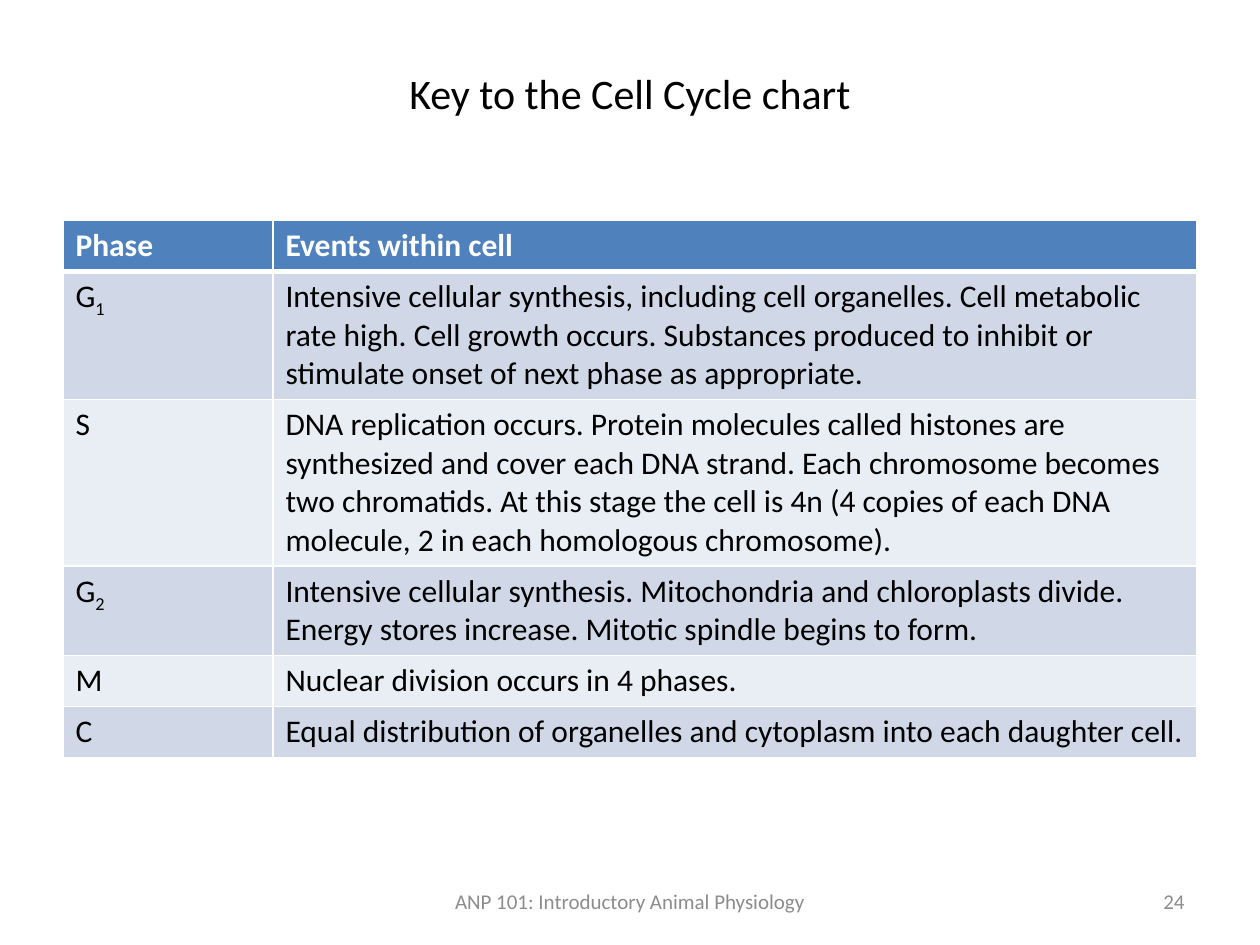
"""Build the slide with the key to the cell cycle chart."""
from lxml import etree
from pptx import Presentation
from pptx.dml.color import RGBColor
from pptx.enum.text import MSO_ANCHOR, PP_ALIGN
from pptx.oxml.ns import qn
from pptx.util import Pt

MIDDLE = MSO_ANCHOR.MIDDLE
CENTER, RIGHT = PP_ALIGN.CENTER, PP_ALIGN.RIGHT

ROWS = [
    (("Phase",), "Events within cell"),
    (("G", "1"), "Intensive cellular synthesis, including cell organelles. Cell metabolic rate high. "
                 "Cell growth occurs. Substances produced to inhibit or stimulate onset of next phase "
                 "as appropriate."),
    (("S",), "DNA replication occurs. Protein molecules called histones are synthesized and cover each "
             "DNA strand. Each chromosome becomes two chromatids. At this stage the cell is 4n (4 copies "
             "of each DNA molecule, 2 in each homologous chromosome)."),
    (("G", "2"), "Intensive cellular synthesis. Mitochondria and chloroplasts divide. Energy stores "
                 "increase. Mitotic spindle begins to form."),
    (("M",), "Nuclear division occurs in 4 phases."),
    (("C",), "Equal distribution of organelles and cytoplasm into each daughter cell."),
]

THEME = {
    "font": "Calibri",
    "title": {"size": 24, "color": "000000"},
    "head": {"size": 18, "color": "FFFFFF", "bold": True},
    "body": {"size": 18, "color": "000000", "bold": False},
    "foot": {"size": 12, "color": "8C8C8C"},
    "fills": {"head": "4F81BD", "bands": ("D0D8E8", "E9EDF4")},
    "rule": "FFFFFF",
}

LABELS = [
    ("Key to the Cell Cycle chart", (36, 21.6, 648, 62.6), "title", CENTER),
    ("ANP 101: Introductory Animal Physiology", (246, 500.5, 228, 28.75), "foot", CENTER),
    ("24", (516, 500.5, 168, 28.75), "foot", RIGHT),
]

GRID = (36, 126, 648, 324.8)
WIDTHS = (120, 528)
ROW_H = 29.2
THIN, THICK = 1, 3


def write(para, parts, kind):
    """Add the parts as runs, each part after the first as a subscript."""
    for i, part in enumerate(parts):
        run = para.add_run()
        run.text = part
        look = dict(THEME[kind], name=THEME["font"])
        run.font.color.rgb = RGBColor.from_string(look.pop("color"))
        look["size"] = Pt(look["size"])
        for key, value in look.items():
            setattr(run.font, key, value)
        if i:
            run._r.get_or_add_rPr().set("baseline", "-25000")


def label(slide, text, box, kind, align):
    """Add one line of text in a box."""
    frame = slide.shapes.add_textbox(*map(Pt, box)).text_frame
    for key, value in {"word_wrap": True, "vertical_anchor": MIDDLE}.items():
        setattr(frame, key, value)
    para = frame.paragraphs[0]
    para.alignment = align
    write(para, (text,), kind)


def border(cell, sides):
    """Draw the sides of a cell from a dict of side to width."""
    props = cell._tc.get_or_add_tcPr()
    for side, width in sides.items():
        line = etree.SubElement(props, qn(f"a:ln{side}"), w=str(Pt(width)))
        fill = etree.SubElement(line, qn("a:solidFill"))
        etree.SubElement(fill, qn("a:srgbClr"), val=THEME["rule"])


def table(slide):
    """Add the table of phases and events."""
    grid = slide.shapes.add_table(len(ROWS), len(WIDTHS), *map(Pt, GRID)).table
    for col, width in zip(grid.columns, WIDTHS):
        col.width = Pt(width)
    fills = THEME["fills"]
    for i, (phase, event) in enumerate(ROWS):
        grid.rows[i].height = Pt(ROW_H)
        kind = "body" if i else "head"
        fill = fills["bands"][(i - 1) % 2] if i else fills["head"]
        sides = {"L": THIN, "R": THIN, "T": THICK if i == 1 else THIN, "B": THIN if i else THICK}
        for cell, parts in zip(grid.rows[i].cells, (phase, (event,))):
            write(cell.text_frame.paragraphs[0], parts, kind)
            border(cell, sides)
            cell.fill.solid()
            cell.fill.fore_color.rgb = RGBColor.from_string(fill)


def main():
    """Build and save the deck."""
    deck = Presentation()
    deck.slide_width, deck.slide_height = Pt(720), Pt(540)
    slide = deck.slides.add_slide(deck.slide_layouts[6])
    table(slide)
    for item in LABELS:
        label(slide, *item)
    deck.save("out.pptx")


if __name__ == "__main__":
    main()
